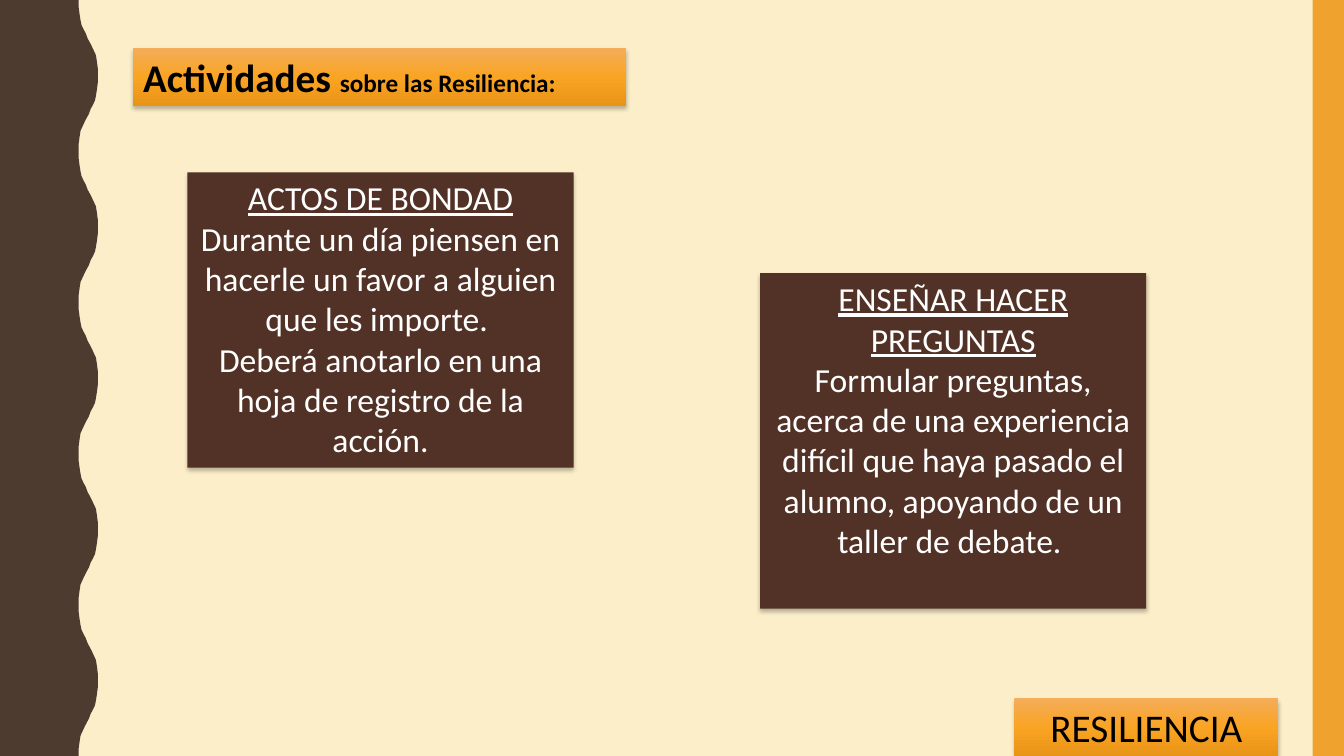
"""Builds the slide on resilience activities, with a wavy left border."""
from copy import deepcopy

from lxml.etree import SubElement
from pptx import Presentation
from pptx.dml.color import RGBColor
from pptx.enum.shapes import MSO_SHAPE as Shape
from pptx.enum.text import MSO_ANCHOR as Anchor, MSO_AUTO_SIZE as AutoSize, PP_ALIGN as Align
from pptx.oxml.ns import qn
from pptx.util import Inches, Pt

COLORS = {
    "cream": "FBEEC9", "bark": "4E3B30", "amber": "F0A22E", "brown": "523227",
    "light": "F4AD58", "orange": "FAA424", "deep": "E89416",
    "black": "000000", "white": "FFFFFF",
}
COLORS = {name: RGBColor.from_string(value) for name, value in COLORS.items()}

presentation = Presentation()
presentation.slide_width, presentation.slide_height = Inches(13.33), Inches(7.5)
WIDTH, HEIGHT = presentation.slide_width, presentation.slide_height
slide = presentation.slides.add_slide(presentation.slide_layouts[5])
slide.background.fill.solid()
slide.background.fill.fore_color.rgb = COLORS["cream"]


def add_text(paragraph, text, size=24, color="white", bold=False, underline=False, align=Align.CENTER):
    paragraph.alignment = align
    run = paragraph.add_run()
    run.text = text
    run.font.name = "Calibri"
    run.font.size = Pt(size)
    run.font.bold = bold
    run.font.underline = underline
    run.font.color.rgb = COLORS[color]


def place(shape, left, top, width, height):
    """Set the position in percent of the slide's size."""
    shape.left, shape.width = (int(WIDTH * share / 100) for share in (left, width))
    shape.top, shape.height = (int(HEIGHT * share / 100) for share in (top, height))


VALLEY, CREST, HALF_WAVES = 5.85, 7.28, 10
OUT = [0, 0, 0.05, 0.1, 0.15, 0.26, 0.37, 0.47, 0.58, 0.68, 0.79, 0.9, 0.95, 1, 1]
DOWN = [0, 0.09, 0.19, 0.27, 0.33, 0.39, 0.44, 0.51, 0.56, 0.61, 0.67, 0.73, 0.81, 0.91, 1]
edge = []
for half in range(HALF_WAVES):
    for out, down in zip(OUT, DOWN):
        swing = 1 - out if half % 2 else out
        x = (VALLEY + (CREST - VALLEY) * swing) / 100
        edge.append((int(WIDTH * x), int(HEIGHT * (half + down) / HALF_WAVES)))
builder = slide.shapes.build_freeform(0, 0)
builder.add_line_segments(edge + [(0, HEIGHT)], close=True)
wave = builder.convert_to_shape()
band = slide.shapes.add_shape(Shape.RECTANGLE, 0, 0, 0, 0)
place(band, 97.67, 0, 2.33, 100)
for border, color in ((wave, "bark"), (band, "amber")):
    border.shadow.inherit = False
    border.fill.solid()
    border.fill.fore_color.rgb = COLORS[color]
    border.line.fill.background()

title = slide.shapes.title
kindness, questions, footer = (slide.shapes.add_shape(Shape.RECTANGLE, 0, 0, 0, 0) for _ in range(3))
place(title, 9.9, 6.4, 36.68, 7.6)
place(kindness, 13.95, 22.8, 28.73, 39.07)
place(questions, 56.56, 36.13, 28.73, 44.4)
place(footer, 75.47, 92.4, 19.65, 7.6)

for label in (title, footer):
    label.fill.gradient()
    label.fill.gradient_angle = 270
    first = label._element.spPr.find(".//" + qn("a:gs"))
    first.addnext(deepcopy(first))
    for stop, position, color in zip(label.fill.gradient_stops, (0, 0.5, 1), ("light", "orange", "deep")):
        stop.position = position
        stop.color.rgb = COLORS[color]
for card in (kindness, questions):
    card.fill.solid()
    card.fill.fore_color.rgb = COLORS["brown"]

for box in (title, kindness, questions, footer):
    box.line.fill.background()
    box.shadow.inherit = False
    effects = box._element.spPr.find(qn("a:effectLst"))
    shadow = SubElement(effects, qn("a:outerShdw"), blurRad=str(Pt(3)), dist=str(Pt(2)),
                        dir="5400000", algn="ctr", rotWithShape="0")
    shade = SubElement(shadow, qn("a:srgbClr"), val=str(COLORS["black"]))
    SubElement(shade, qn("a:alpha"), val="25000")
    frame = box.text_frame
    frame.word_wrap = box is not title
    frame.auto_size = AutoSize.NONE
    frame.vertical_anchor = Anchor.TOP

heading = title.text_frame.paragraphs[0]
add_text(heading, "Actividades ", size=28, color="black", bold=True, align=Align.LEFT)
add_text(heading, "sobre las Resiliencia:", size=18, color="black", bold=True, align=Align.LEFT)
add_text(footer.text_frame.paragraphs[0], "RESILIENCIA", size=28, color="black")

ACTIVITIES = [
    (kindness, "ACTOS DE BONDAD", [
        "Durante un día piensen en hacerle un favor a alguien que les importe. ",
        "Deberá anotarlo en una hoja de registro de la acción.",
    ]),
    (questions, "ENSEÑAR HACER PREGUNTAS", [
        "Formular preguntas, acerca de una experiencia difícil que haya pasado el alumno, "
        "apoyando de un taller de debate. ",
    ]),
]
for card, name, steps in ACTIVITIES:
    add_text(card.text_frame.paragraphs[0], name, underline=True)
    for step in steps:
        add_text(card.text_frame.add_paragraph(), step)

presentation.save("out.pptx")
